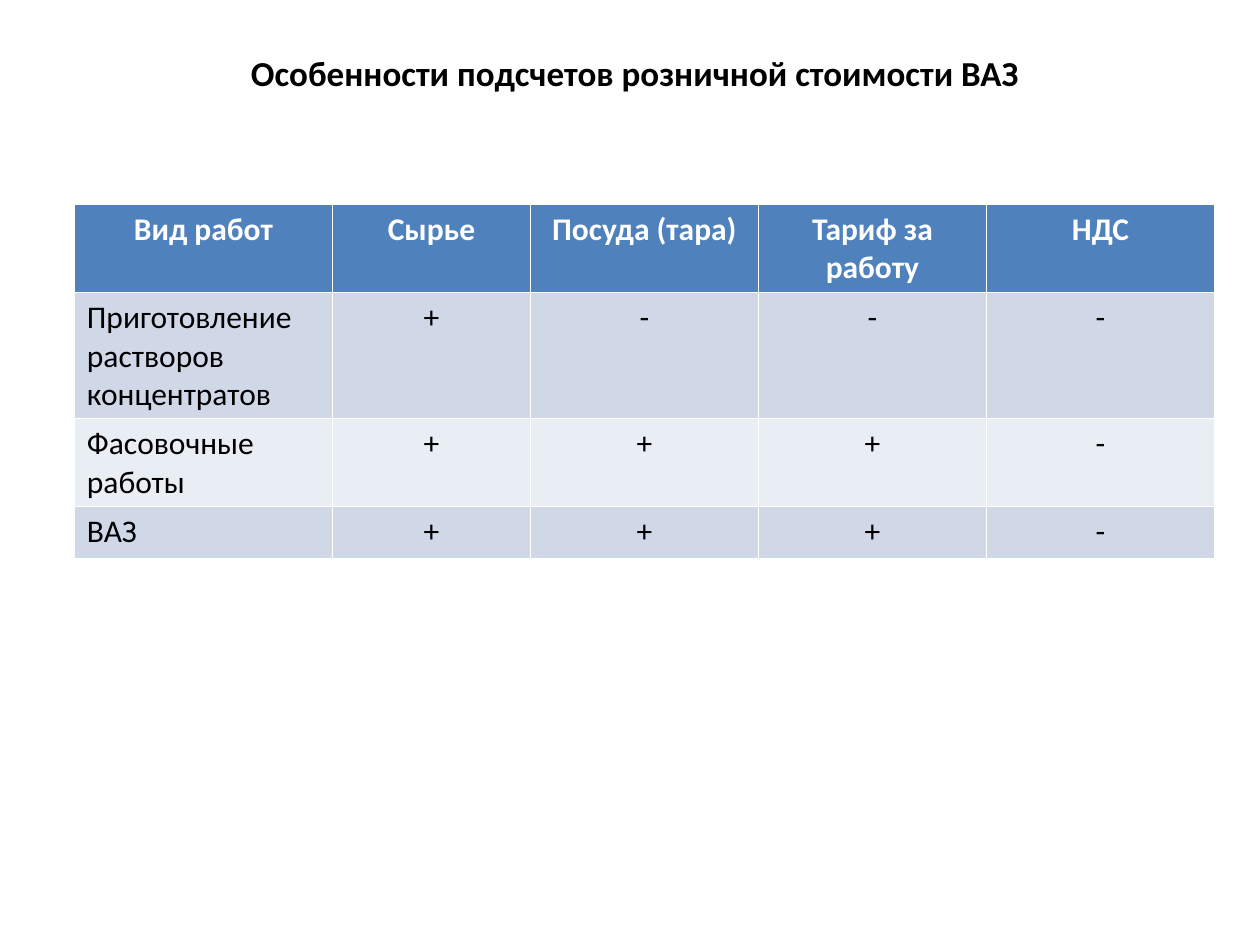
import dataclasses

import pptx
import pptx.dml.color
import pptx.enum.text
import pptx.util

ALIGN = pptx.enum.text.PP_ALIGN
INCH = pptx.util.Inches


@dataclasses.dataclass(frozen=True)
class Theme:
    """Colours, font and type sizes of the slide."""
    font: str = "Calibri"
    ink: str = "000000"
    white: str = "FFFFFF"
    head: str = "4F81BD"
    bands: tuple = ("D0D8E8", "E9EDF4")
    title: int = 20
    body: int = 18


THEME = Theme()
LEFT = 0.59
COLS = (2.05, 1.57, 1.81, 1.81, 1.81)
ROWS = (0.7, 1, 0.7, 0.41)
DATA = (
    ("Вид работ", "Сырье", "Посуда (тара)", "Тариф за работу", "НДС"),
    ("Приготовление растворов концентратов", "+", "-", "-", "-"),
    ("Фасовочные работы", "+", "+", "+", "-"),
    ("ВАЗ", "+", "+", "+", "-"),
)


def rgb(code):
    """Turn a hex code into a colour."""
    return pptx.dml.color.RGBColor.from_string(code)


def write(frame, text, size, color, bold, align):
    """Write one styled paragraph into a text frame."""
    frame.text = text
    para = frame.paragraphs[0]
    para.alignment = align
    font = para.font
    font.name, font.size, font.bold = THEME.font, pptx.util.Pt(size), bold
    font.color.rgb = rgb(color)


def add_title(slide, text):
    """Place and format the title."""
    title = slide.shapes.title
    title.left, title.top = INCH(LEFT), INCH(0.36)
    title.width, title.height = INCH(8.9), INCH(0.44)
    frame = title.text_frame
    frame.vertical_anchor = pptx.enum.text.MSO_ANCHOR.TOP
    frame.auto_size = pptx.enum.text.MSO_AUTO_SIZE.SHAPE_TO_FIT_TEXT
    write(frame, text, THEME.title, THEME.ink, True, ALIGN.CENTER)


def fill_cell(cell, text, row, col):
    """Fill one cell by its place in the grid."""
    head = row == 0
    cell.fill.solid()
    cell.fill.fore_color.rgb = rgb(THEME.head if head else THEME.bands[(row - 1) % 2])
    align = ALIGN.CENTER if head or col else ALIGN.LEFT
    color = THEME.white if head else THEME.ink
    write(cell.text_frame, text, THEME.body, color, head, align)


def add_grid(slide):
    """Add the table of works and cost parts."""
    grid = slide.shapes.add_table(
        len(ROWS), len(COLS), INCH(LEFT), INCH(1.62), INCH(sum(COLS)), INCH(sum(ROWS))
    ).table
    for col, width in zip(grid.columns, COLS):
        col.width = INCH(width)
    for row, height in zip(grid.rows, ROWS):
        row.height = INCH(height)
    for r, line in enumerate(DATA):
        for c, text in enumerate(line):
            fill_cell(grid.cell(r, c), text, r, c)


def main():
    """Build and save the slide."""
    deck = pptx.Presentation()
    deck.slide_width, deck.slide_height = INCH(10), INCH(7.5)
    slide = deck.slides.add_slide(deck.slide_layouts[5])
    add_title(slide, "Особенности подсчетов розничной стоимости ВАЗ")
    add_grid(slide)
    deck.save("out.pptx")


if __name__ == "__main__":
    main()
